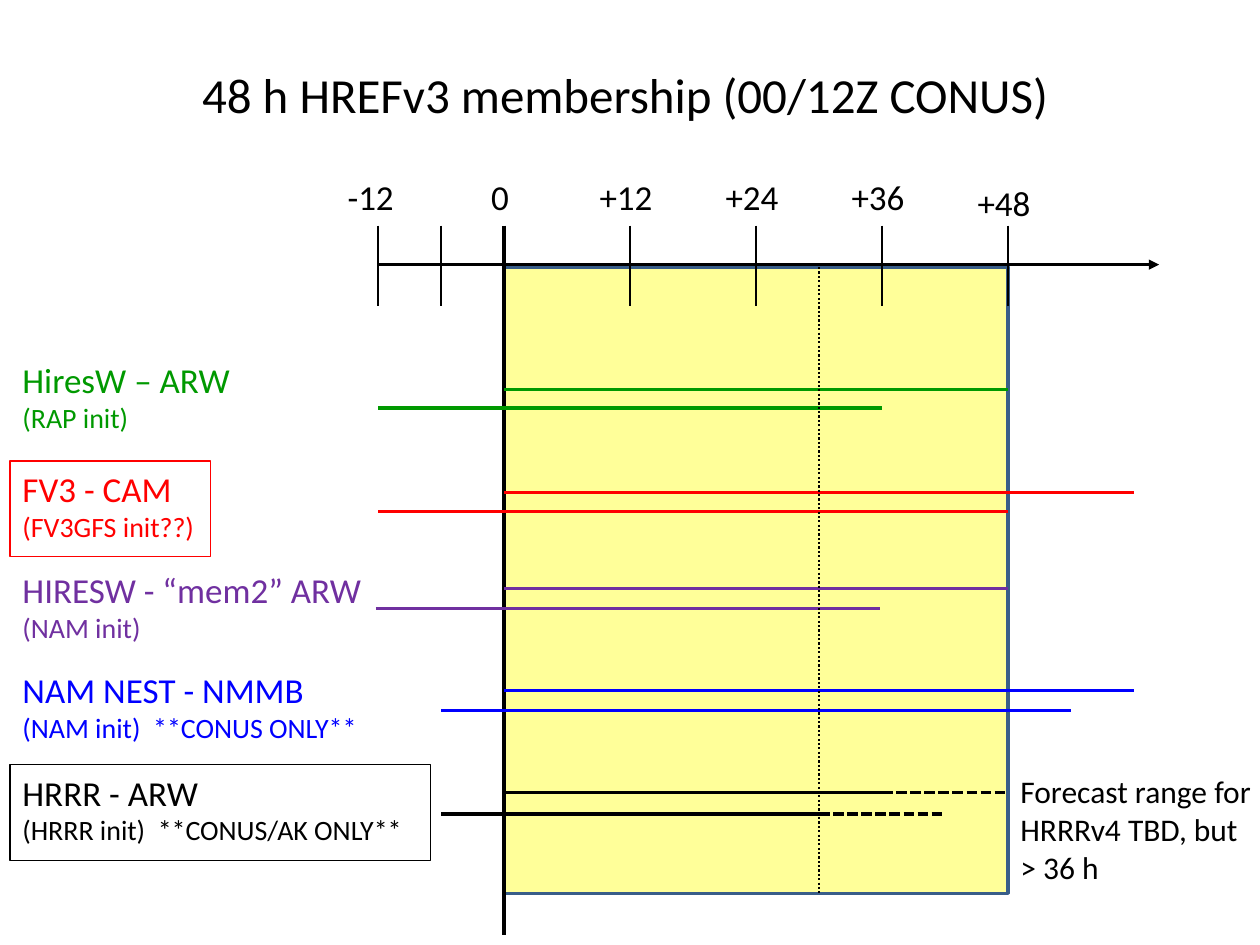
from lxml import etree
from pptx import Presentation
from pptx.dml.color import RGBColor
from pptx.enum.dml import MSO_LINE
from pptx.enum.shapes import MSO_CONNECTOR, MSO_SHAPE
from pptx.enum.text import MSO_ANCHOR, MSO_AUTO_SIZE, PP_ALIGN
from pptx.oxml.ns import qn
from pptx.util import Inches, Pt

STRAIGHT = MSO_CONNECTOR.STRAIGHT
RECTANGLE = MSO_SHAPE.RECTANGLE
DOT, DASH = MSO_LINE.ROUND_DOT, MSO_LINE.SQUARE_DOT

FONT = "Calibri"
BLACK = RGBColor(0, 0, 0)
GREEN = RGBColor(0, 0x99, 0)
RED = RGBColor(0xFF, 0, 0)
PURPLE = RGBColor(0x70, 0x30, 0xA0)
BLUE = RGBColor(0, 0, 0xFF)
YELLOW = RGBColor(0xFF, 0xFF, 0x99)
STEEL = RGBColor(0x39, 0x5E, 0x89)

ZERO_X, HOURS_PER_INCH = 4, 12
AXIS_Y, TICK_TOP, TICK_BOTTOM = 2.1, 1.79, 2.43
WINDOW_TOP, WINDOW_BOTTOM = 2.12, 7.09
LABEL_LEFT = 0.08

# name, initial conditions, colour, label (top, width, height), framed
MEMBERS = [
    ("HiresW – ARW", "(RAP init)", GREEN, (2.8, 2, 0.76), False),
    ("FV3 - CAM", "(FV3GFS init??)", RED, (3.66, 1.59, 0.76), True),
    ("HIRESW - “mem2” ARW", "(NAM init)", PURPLE, (4.46, 3.15, 0.76), False),
    ("NAM NEST - NMMB", "(NAM init)  **CONUS ONLY**", BLUE, (5.26, 4.08, 0.76), False),
    ("HRRR - ARW", "(HRRR init)  **CONUS/AK ONLY**", BLACK, (6.07, 3.34, 0.76), True),
]

# y, first hour, last hour, colour, dash
RUNS = [
    (3.09, 0, 48, GREEN, None),
    (3.24, -12, 36, GREEN, None),
    (3.91, 0, 60, RED, None),
    (4.06, -12, 48, RED, None),
    (4.67, 0, 48, PURPLE, None),
    (4.83, -12.2, 35.8, PURPLE, None),
    (5.48, 0, 60, BLUE, None),
    (5.64, -6, 54, BLUE, None),
    (6.29, 0, 36, BLACK, None),
    (6.29, 36, 48, BLACK, DASH),
    (6.46, -6, 30, BLACK, None),
    (6.46, 30, 42, BLACK, DASH),
]


def hour_x(hour):
    return ZERO_X + hour / HOURS_PER_INCH


def add_line(slide, start, end, color, width, dash=None, arrow=False):
    line = slide.shapes.add_connector(STRAIGHT, *map(Inches, start + end))
    line.line.color.rgb = color
    line.line.width = Pt(width)
    if dash is not None:
        line.line.dash_style = dash
    properties = line._element.spPr
    if arrow:
        outline = properties.find(qn("a:ln"))
        etree.SubElement(outline, qn("a:tailEnd"), type="triangle", w="med", len="med")
    etree.SubElement(properties, qn("a:effectLst"))


def add_box(slide, place, line_color, line_width, fill=None):
    box = slide.shapes.add_shape(RECTANGLE, *map(Inches, place))
    box.shadow.inherit = False
    if fill is None:
        box.fill.background()
    else:
        box.fill.solid()
        box.fill.fore_color.rgb = fill
    box.line.color.rgb = line_color
    box.line.width = Pt(line_width)
    return box


def write(shape, lines, color, align=PP_ALIGN.LEFT):
    """Fill a shape with lines, each a pair of text and point size."""
    frame = shape.text_frame
    frame.word_wrap = True
    frame.auto_size = MSO_AUTO_SIZE.NONE
    frame.vertical_anchor = MSO_ANCHOR.TOP
    frame.text = "\n".join(text for text, size in lines)
    for paragraph, (text, size) in zip(frame.paragraphs, lines):
        paragraph.alignment = align
        for run in paragraph.runs:
            run.font.name = FONT
            run.font.size = Pt(size)
            run.font.color.rgb = color


def add_text(slide, place, lines, color=BLACK):
    write(slide.shapes.add_textbox(*map(Inches, place)), lines, color)


def add_title(slide, text):
    title = slide.shapes.title
    title.left, title.top, title.width, title.height = map(Inches, (0.5, 0.46, 8.92, 0.57))
    write(title, [(text, 28)], BLACK, PP_ALIGN.CENTER)


def add_time_axis(slide):
    add_line(slide, (hour_x(-12), AXIS_Y), (9.2, AXIS_Y), BLACK, 1.5, arrow=True)
    for hour in (-12, -6, 12, 24, 36, 48):
        add_line(slide, (hour_x(hour), TICK_TOP), (hour_x(hour), TICK_BOTTOM), BLACK, 0.75)
    add_line(slide, (ZERO_X, TICK_TOP), (ZERO_X, 7.42), BLACK, 2)
    for hour in range(-12, 49, 12):
        label = f"{hour:+d}" if hour else "0"
        left = hour_x(hour) - (0.34 if hour else 0.2)
        top = 1.39 if hour == 48 else 1.34
        add_text(slide, (left, top, 0.68 if hour else 0.36, 0.44), [(label, 20)])


def add_member(slide, name, init, color, label, framed):
    top, width, height = label
    place = (LABEL_LEFT, top, width, height)
    lines = [(name, 20), (init, 16)]
    if framed:
        write(add_box(slide, place, color, 0.75), lines, color)
    else:
        add_text(slide, place, lines, color)


def main():
    prs = Presentation()
    prs.slide_width, prs.slide_height = Inches(10), Inches(7.5)
    slide = prs.slides.add_slide(prs.slide_layouts[5])
    add_title(slide, "48 h HREFv3 membership (00/12Z CONUS)")
    window = (ZERO_X, WINDOW_TOP, hour_x(48) - ZERO_X, WINDOW_BOTTOM - WINDOW_TOP)
    add_box(slide, window, STEEL, 2, YELLOW)
    add_time_axis(slide)
    for member in MEMBERS:
        add_member(slide, *member)
    for y, first, last, color, dash in RUNS:
        add_line(slide, (hour_x(first), y), (hour_x(last), y), color, 2, dash)
    add_line(slide, (hour_x(30), WINDOW_TOP), (hour_x(30), WINDOW_BOTTOM), BLACK, 1.25, DOT)
    add_text(slide, (hour_x(48), 6.08, 2.07, 1.01),
             [("Forecast range for HRRRv4 TBD, but > 36 h", 18)])
    prs.save("out.pptx")


if __name__ == "__main__":
    main()
